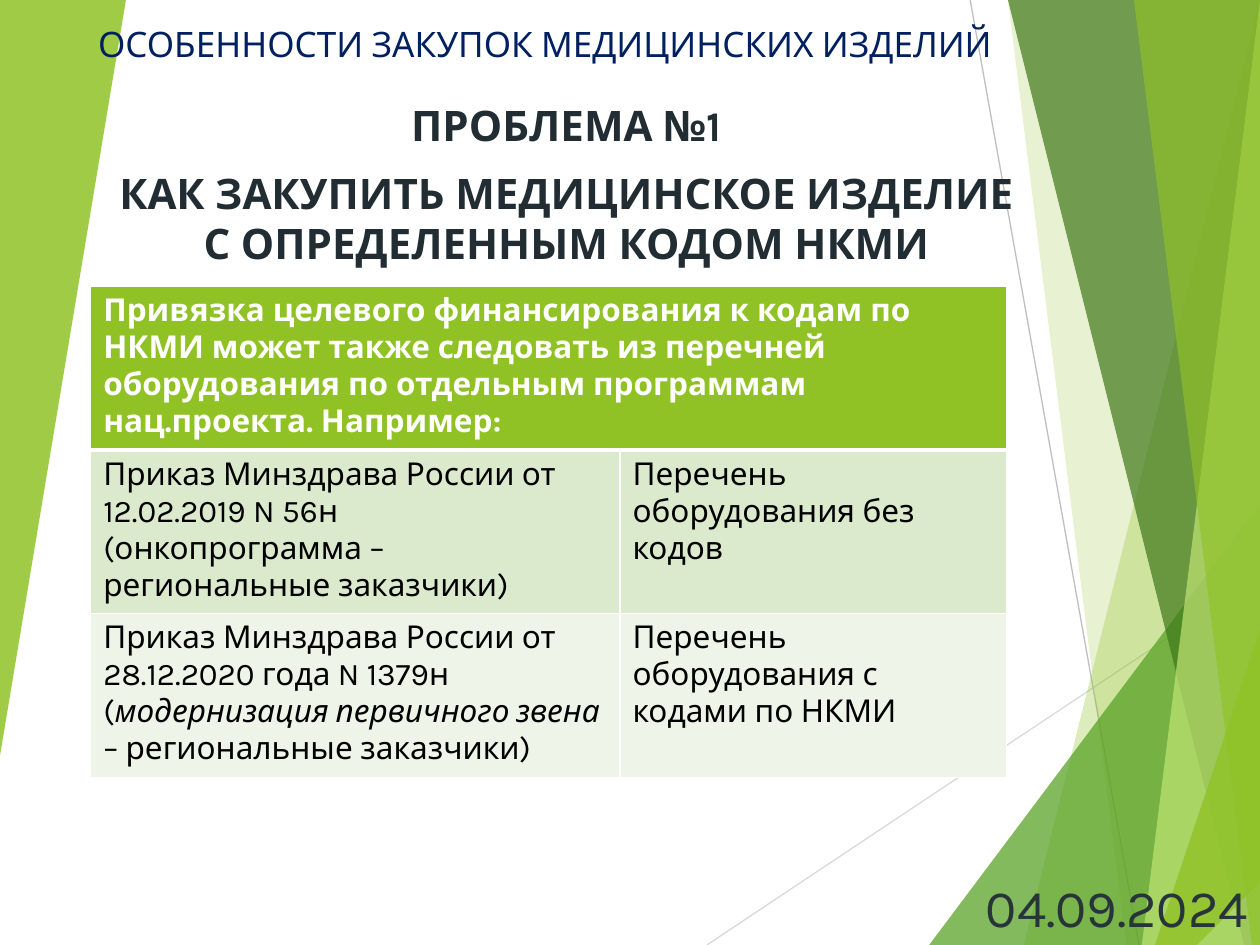
import pptx
import pptx.util
import pptx.dml.color
import pptx.enum.shapes
import pptx.enum.text
import pptx.oxml
import pptx.oxml.ns
import lxml.etree

Inches = pptx.util.Inches
Pt = pptx.util.Pt
qn = pptx.oxml.ns.qn


def color(hex_text):
    return pptx.dml.color.RGBColor.from_string(hex_text)


def write(tf, lines, size, hex_text, bold=False, align=None, before=None):
    tf.word_wrap = True
    tf.text = "\n".join(lines)
    for p in tf.paragraphs:
        p.alignment = align
        p.space_before = before
        for r in p.runs:
            r.font.name = "Karla"
            r.font.size = Pt(size)
            r.font.bold = bold
            r.font.color.rgb = color(hex_text)


prs = pptx.Presentation()
prs.slide_width = Inches(10)
prs.slide_height = Inches(7.5)
s = prs.slides.add_slide(prs.slide_layouts[6])

rays = [
    (5.61, 7.5, 10.01, 4.57, "D9D9D9"),
    (7.7, 0, 9.04, 7.5, "BFBFBF"),
]
for x1, y1, x2, y2, hex_text in rays:
    line = s.shapes.add_connector(
        pptx.enum.shapes.MSO_CONNECTOR.STRAIGHT,
        Inches(x1), Inches(y1), Inches(x2), Inches(y2))
    line.line.color.rgb = color(hex_text)
    line.line.width = Pt(0.75)
    lxml.etree.SubElement(line._element.spPr, qn("a:effectLst"))

facets = [
    ("90C226", 30, [(9.75, 0), (7.54, 7.5), (10.02, 7.51), (10.01, 0.01)]),
    ("90C226", 20, [(7.88, -0.01), (9.19, 7.5), (10.01, 7.5), (10.01, -0.01)]),
    ("54A021", 72, [(7.26, 7.5), (10, 4.29), (10.01, 7.5)]),
    ("3F7819", 70, [(7.67, -0.01), (9.7, 7.5), (10.01, 7.49), (10.01, -0.01)]),
    ("C0E474", 70, [(9.81, -0.01), (9.07, 7.5), (10.01, 7.5), (10, -0.01)]),
    ("90C226", 65, [(8.83, -0.01), (9.86, 7.5), (10, 7.5), (9.98, -0.01)]),
    ("90C226", 80, [(8.81, 7.5), (10.01, 5.35), (10.01, 7.49)]),
    ("90C226", 85, [(-0.01, 0), (0.94, -0.01), (0.94, 0.01), (-0.01, 6.22)]),
]
for hex_text, opacity, points in facets:
    builder = s.shapes.build_freeform(*points[0], scale=Inches(1))
    builder.add_line_segments(points[1:], close=True)
    facet = builder.convert_to_shape()
    facet.shadow.inherit = False
    facet.line.fill.background()
    facet.fill.solid()
    facet.fill.fore_color.rgb = color(hex_text)
    fill_color = facet._element.spPr.find(qn("a:solidFill"))[0]
    lxml.etree.SubElement(fill_color, qn("a:alpha"), val=str(opacity * 1000))

TOP = pptx.enum.text.MSO_ANCHOR.TOP
BOTTOM = pptx.enum.text.MSO_ANCHOR.BOTTOM
texts = [
    (0.35, 0.13, 7.95, 0.47, TOP, 20, "002060", False, 10,
     ["ОСОБЕННОСТИ ЗАКУПОК МЕДИЦИНСКИХ ИЗДЕЛИЙ"]),
    (7.52, 6.84, 2.69, 0.65, BOTTOM, 30, "27353B", False, 6, ["04.09.2024"]),
    (0.72, 0.74, 7.55, 1.4, TOP, 24, "212D32", True, 10,
     ["ПРОБЛЕМА №1",
      "КАК ЗАКУПИТЬ МЕДИЦИНСКОЕ ИЗДЕЛИЕ С ОПРЕДЕЛЕННЫМ КОДОМ НКМИ"]),
]
for x, y, w, h, anchor, size, hex_text, bold, before, lines in texts:
    box = s.shapes.add_textbox(Inches(x), Inches(y), Inches(w), Inches(h))
    tf = box.text_frame
    tf.vertical_anchor = anchor
    write(tf, lines, size, hex_text, bold,
          pptx.enum.text.PP_ALIGN.CENTER, Pt(before))

rows = [
    ("90C226", 1.25, [
        ["Привязка целевого финансирования к кодам по НКМИ может также следовать "
         "из перечней оборудования по отдельным программам нац.проекта. Например:"],
        []]),
    ("DBE9CD", 1.27, [
        ["Приказ Минздрава России от 12.02.2019 N 56н",
         "(онкопрограмма – региональные заказчики)"],
        ["Перечень оборудования без кодов"]]),
    ("EEF4E8", 1.27, [
        ["Приказ Минздрава России от 28.12.2020 года N 1379н", "("],
        ["Перечень оборудования с кодами по НКМИ"]]),
]
table = s.shapes.add_table(
    3, 2, Inches(0.72), Inches(2.27), Inches(7.27), Inches(3.79)).table
table.columns[0].width = Inches(4.2)
table.columns[1].width = Inches(3.07)
table.cell(0, 0).merge(table.cell(0, 1))
for i, (fill, height, cells) in enumerate(rows):
    table.rows[i].height = Inches(height)
    for j, lines in enumerate(cells):
        cell = table.cell(i, j)
        write(cell.text_frame, lines, 18, "000000" if i else "FFFFFF", i == 0)
        tcPr = cell._tc.get_or_add_tcPr()
        for side in "LRTB":
            thick = (i, side) in [(0, "B"), (1, "T")]
            tcPr.append(pptx.oxml.parse_xml(
                f'<a:ln{side} xmlns:a="http://schemas.openxmlformats.org/drawingml/2006/main"'
                f' w="{Pt(3 if thick else 1)}"><a:solidFill><a:srgbClr val="FFFFFF"/>'
                f'</a:solidFill></a:ln{side}>'))
        cell.fill.solid()
        cell.fill.fore_color.rgb = color(fill)

p = table.cell(2, 0).text_frame.paragraphs[1]
for text, italic in [("модернизация первичного звена ", True),
                     ("– региональные заказчики)", False)]:
    r = p.add_run()
    r.text = text
    r.font.name = "Karla"
    r.font.size = Pt(18)
    r.font.bold = False
    r.font.italic = italic
    r.font.color.rgb = color("000000")

prs.save("out.pptx")
